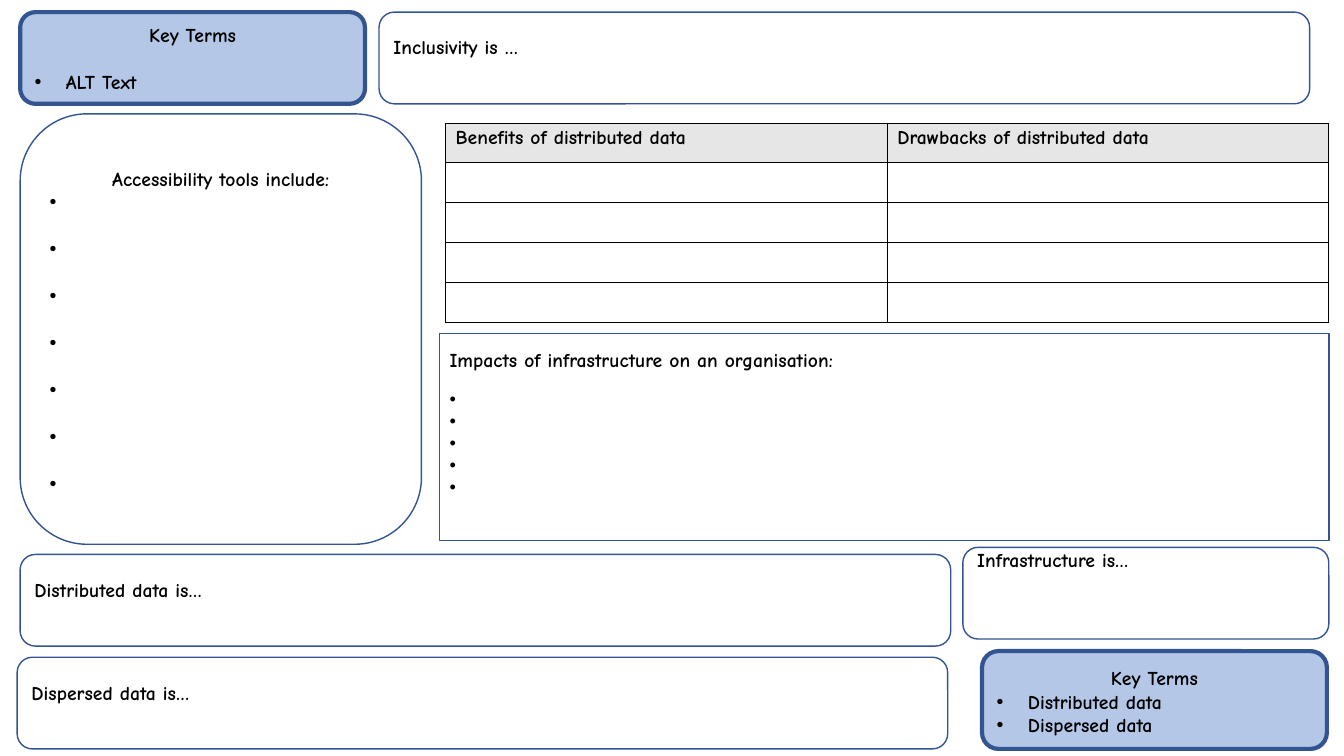
from dataclasses import dataclass

from lxml import etree
from pptx import Presentation
from pptx.dml.color import RGBColor
from pptx.enum import shapes, text
from pptx.oxml import ns
from pptx.util import Inches, Pt


@dataclass(frozen=True)
class Theme:
    font: str = "Comic Neue"
    ink: RGBColor = RGBColor(0, 0, 0)
    outline: RGBColor = RGBColor(0x32, 0x54, 0x91)
    key_fill: RGBColor = RGBColor(0xB4, 0xC7, 0xE7)
    header_fill: RGBColor = RGBColor(0xE7, 0xE6, 0xE6)
    size: float = 14
    small: float = 13
    line: float = 16.8


THEME = Theme()
CORNER = 1 / 6


def write(paragraph, words, size=THEME.size, bold=True, centred=False,
          indent=None, before=0):
    """Fill a paragraph; an indent in inches makes it a bullet."""
    run = paragraph.add_run()
    run.text = words
    run.font.name = THEME.font
    run.font.size = Pt(size)
    run.font.bold = bold
    run.font.color.rgb = THEME.ink
    paragraph.alignment = text.PP_ALIGN.CENTER if centred else text.PP_ALIGN.LEFT
    paragraph.space_before = Pt(before)
    if indent:
        properties = paragraph._p.get_or_add_pPr()
        properties.set("marL", str(Inches(indent)))
        properties.set("indent", str(-Inches(indent)))
        font = etree.SubElement(properties, ns.qn("a:buFont"))
        font.set("typeface", "Arial")
        etree.SubElement(properties, ns.qn("a:buChar")).set("char", "•")


def add_panel(slide, box, heading, text_top, rounded=True, fill=None,
              line_width=1, centred=False):
    """Draw an outlined panel whose heading starts text_top below its top edge."""
    kind = shapes.MSO_SHAPE.ROUNDED_RECTANGLE if rounded else shapes.MSO_SHAPE.RECTANGLE
    panel = slide.shapes.add_shape(kind, *map(Inches, box))
    panel.shadow.inherit = False
    if fill is None:
        panel.fill.background()
    else:
        panel.fill.solid()
        panel.fill.fore_color.rgb = fill
    panel.line.color.rgb = THEME.outline
    panel.line.width = Pt(line_width)

    corner_inset = 0
    if rounded:
        panel.adjustments[0] = CORNER
        corner_inset = 0.29 * CORNER * min(box[2:])
    frame = panel.text_frame
    frame.word_wrap = True
    frame.vertical_anchor = text.MSO_ANCHOR.TOP
    frame.margin_top = Inches(text_top - corner_inset)
    frame.margin_bottom = 0
    write(frame.paragraphs[0], heading, centred=centred)
    return frame


def add_key_terms(slide, box, terms, text_top, gap=0):
    frame = add_panel(slide, box, "Key Terms", text_top, fill=THEME.key_fill,
                      line_width=3, centred=True)
    for index, term in enumerate(terms):
        write(frame.add_paragraph(), term, indent=0.31,
              before=0 if index else gap)


def add_accessibility(slide, box):
    frame = add_panel(slide, box, "Accessibility tools include:", 0.52, centred=True)
    for index in range(7):
        write(frame.add_paragraph(), " ", indent=0.31,
              before=THEME.line if index else 0)


def add_impacts(slide, box):
    frame = add_panel(slide, box, "Impacts of infrastructure on an organisation:",
                      0.14, rounded=False)
    for index in range(5):
        write(frame.add_paragraph(), " ", size=THEME.small, bold=False,
              indent=0.19, before=0 if index else 12.5)


def add_borders(cell):
    properties = cell._tc.get_or_add_tcPr()
    for side in ("lnL", "lnR", "lnT", "lnB"):
        line = etree.SubElement(properties, ns.qn(f"a:{side}"), w=str(Pt(0.75)))
        solid = etree.SubElement(line, ns.qn("a:solidFill"))
        etree.SubElement(solid, ns.qn("a:srgbClr"), val=str(THEME.ink))


def add_comparison(slide, box, headings, row_count=5):
    table = slide.shapes.add_table(row_count, len(headings), *map(Inches, box)).table
    table.first_row = table.horz_banding = False
    for row in table.rows:
        row.height = Inches(box[3] / row_count)
        for cell in row.cells:
            add_borders(cell)
            cell.margin_top = cell.margin_bottom = Inches(0.04)
            cell.fill.background()
    for cell, heading in zip(table.rows[0].cells, headings):
        cell.fill.solid()
        cell.fill.fore_color.rgb = THEME.header_fill
        write(cell.text_frame.paragraphs[0], heading)


def main():
    deck = Presentation()
    deck.slide_width, deck.slide_height = Inches(13.33), Inches(7.5)
    slide = deck.slides.add_slide(deck.slide_layouts[6])

    add_accessibility(slide, (0.2, 1.13, 3.98, 4.27))
    add_key_terms(slide, (0.2, 0.12, 3.42, 0.91), ["ALT Text"], 0.11, gap=THEME.line)
    add_key_terms(slide, (9.74, 6.46, 3.42, 0.97),
                  ["Distributed data", "Dispersed data"], 0.15)
    for box, heading, text_top in (
        ((3.76, 0.12, 9.23, 0.91), "Inclusivity is …", 0.23),
        ((0.2, 5.5, 9.23, 0.91), "Distributed data is…", 0.23),
        ((0.17, 6.52, 9.23, 0.91), "Dispersed data is…", 0.23),
        ((9.55, 5.43, 3.63, 0.91), "Infrastructure is…", 0.01),
    ):
        add_panel(slide, box, heading, text_top)
    add_comparison(slide, (4.42, 1.22, 8.76, 1.98),
                   ["Benefits of distributed data", "Drawbacks of distributed data"])
    add_impacts(slide, (4.36, 3.31, 8.82, 2.05))

    deck.save("out.pptx")


if __name__ == "__main__":
    main()
